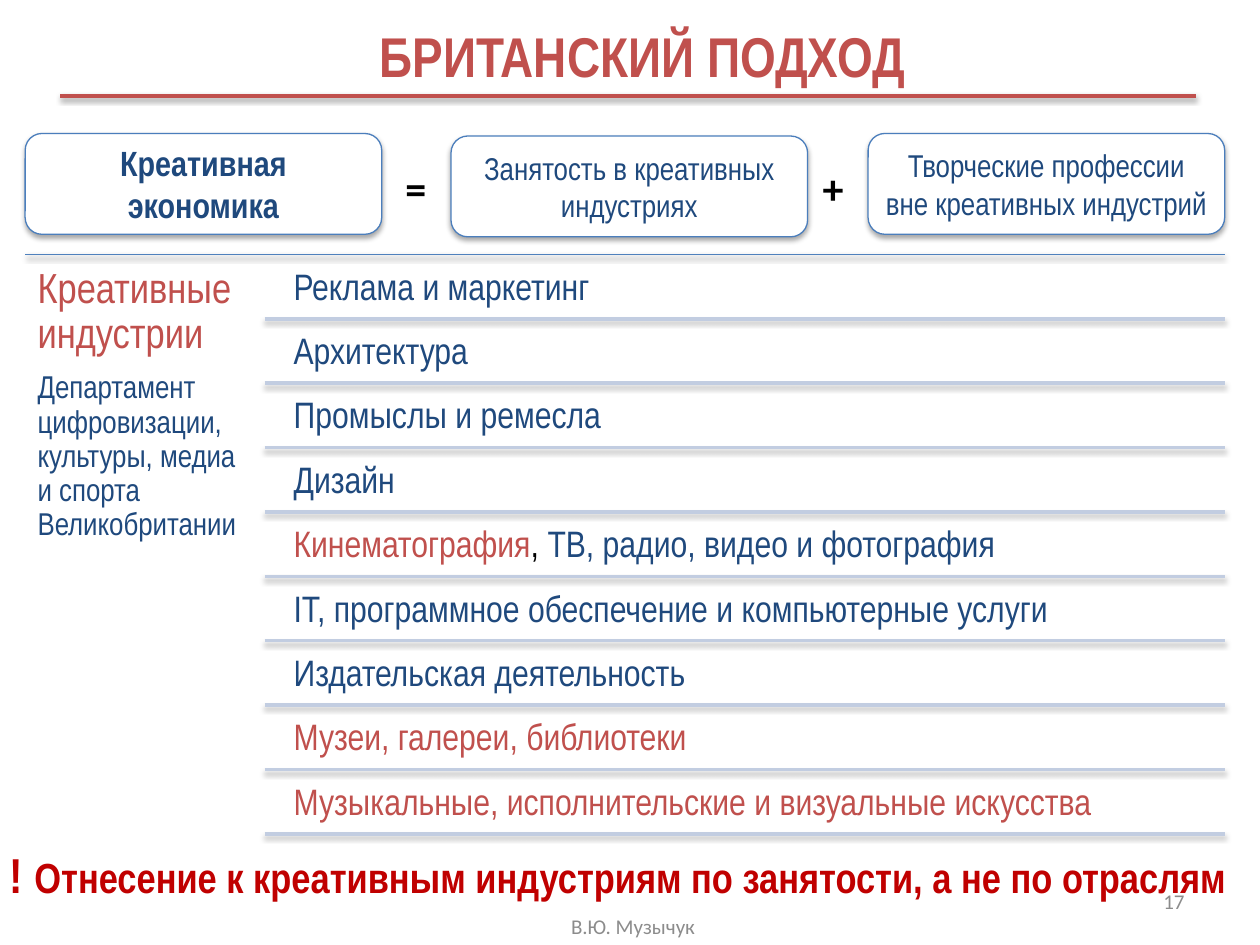
from lxml import etree
from pptx import Presentation
from pptx.dml.color import RGBColor
from pptx.enum import shapes, text
from pptx.oxml.ns import qn
from pptx.util import Inches, Pt

RED = RGBColor(0xC0, 0x50, 0x4D)
DARK_RED = RGBColor(0xC0, 0x00, 0x00)
NAVY = RGBColor(0x1F, 0x49, 0x7D)
BLUE = RGBColor(0x4F, 0x81, 0xBD)
BOX_BLUE = RGBColor(0x4B, 0x7E, 0xBC)
PALE_BLUE = RGBColor(0xC2, 0xCD, 0xE1)
GREY = RGBColor(0x8C, 0x8C, 0x8C)
BLACK = RGBColor(0, 0, 0)
WHITE = RGBColor(0xFF, 0xFF, 0xFF)
NARROW = "Arial Narrow"
CENTER, RIGHT = text.PP_ALIGN.CENTER, text.PP_ALIGN.RIGHT
MIDDLE = text.MSO_ANCHOR.MIDDLE

presentation = Presentation()
presentation.slide_width, presentation.slide_height = Inches(10), Inches(7.5)
slide = presentation.slides.add_slide(presentation.slide_layouts[5])


def add_shadow(shape, distance, opacity):
    effects = etree.SubElement(shape._element.spPr, qn("a:effectLst"))
    shadow = etree.SubElement(effects, qn("a:outerShdw"), blurRad=str(Pt(3.1)),
                              dist=str(Pt(distance)), dir="5400000", rotWithShape="0")
    color = etree.SubElement(shadow, qn("a:srgbClr"), val="000000")
    etree.SubElement(color, qn("a:alpha"), val=str(opacity * 1000))


def write(shape, paragraphs, size, color, font=NARROW, bold=False, align=None,
          anchor=text.MSO_ANCHOR.TOP, wrap=True):
    """Fill a shape with paragraphs, each a list of (text, size, color) runs."""
    frame = shape.text_frame
    frame.word_wrap, frame.vertical_anchor = wrap, anchor
    for index, runs in enumerate(paragraphs):
        paragraph = frame.add_paragraph() if index else frame.paragraphs[0]
        paragraph.alignment = align
        paragraph.font.name, paragraph.font.bold = font, bold
        paragraph.font.size, paragraph.font.color.rgb = Pt(size), color
        for words, run_size, run_color in runs:
            run = paragraph.add_run()
            run.text = words
            if run_size != size:
                run.font.size = Pt(run_size)
            if run_color != color:
                run.font.color.rgb = run_color
    return frame


# Title
title = slide.shapes.title
title.left, title.top, title.width, title.height = (
    Inches(0.2), Inches(-0.19), Inches(9.8), Inches(1.25))
write(title, [[("БРИТАНСКИЙ ПОДХОД", 32, RED)]], 32, RED, bold=True, align=CENTER, anchor=MIDDLE)

# Lines: under the title, under the formula, under each industry
ROW_TOP, ROW_STEP = 2.04, 0.511
industries = [
    [("Реклама и маркетинг", NAVY)],
    [("Архитектура", NAVY)],
    [("Промыслы и ремесла", NAVY)],
    [("Дизайн", NAVY)],
    [("Кинематография", RED), (", ", BLACK), ("ТВ, радио, видео и фотография", NAVY)],
    [("IT, программное обеспечение и компьютерные услуги", NAVY)],
    [("Издательская деятельность", NAVY)],
    [("Музеи, галереи, библиотеки", RED)],
    [("Музыкальные, исполнительские и визуальные искусства", RED)],
]
rules = [(0.48, 9.49, 0.76, RED, 2), (0.2, 9.72, 2.02, BLUE, 0.75)]
rules += [(2.1, 9.72, ROW_TOP + 0.49 + row * ROW_STEP, PALE_BLUE, 2)
          for row in range(len(industries))]
for left, right, y, color, width in rules:
    line = slide.shapes.add_connector(shapes.MSO_CONNECTOR.STRAIGHT, Inches(left), Inches(y),
                                      Inches(right), Inches(y))
    line.line.color.rgb, line.line.width = color, Pt(width)
    if width == 2:
        add_shadow(line, 1.6, 38)
    else:
        add_shadow(line, 1.8, 35)

# Industry rows
for row, runs in enumerate(industries):
    box = slide.shapes.add_textbox(Inches(2.24), Inches(ROW_TOP + row * ROW_STEP),
                                   Inches(7.48), Inches(0.49))
    frame = write(box, [[(words, 21, color) for words, color in runs]], 21, runs[0][1])
    frame.margin_left = frame.margin_right = Inches(0.09)
    frame.margin_top = frame.margin_bottom = Inches(0.09)
    frame.paragraphs[0].line_spacing = 0.9

# Left column
box = slide.shapes.add_textbox(Inches(0.2), Inches(2.02), Inches(1.91), Inches(4.63))
frame = write(box, [
    [("Креативные индустрии", 24, RED)],
    [("Департамент цифровизации, культуры, медиа и спорта Великобритании", 18, NAVY)],
], 18, NAVY)
frame.margin_left = frame.margin_right = frame.margin_top = frame.margin_bottom = Inches(0.1)
for paragraph in frame.paragraphs:
    paragraph.line_spacing, paragraph.space_after = 0.9, Pt(8)

# Formula: boxes and signs
for left, top, words, size, bold in [
    (0.2, 1.06, "Креативная экономика", 20, True),
    (3.58, 1.08, "Занятость в креативных индустриях", 18, False),
    (6.89, 1.06, "Творческие профессии вне креативных индустрий", 18, False),
]:
    box = slide.shapes.add_shape(shapes.MSO_SHAPE.ROUNDED_RECTANGLE, Inches(left), Inches(top),
                                 Inches(2.83), Inches(0.8))
    box.fill.solid()
    box.fill.fore_color.rgb = WHITE
    box.line.color.rgb, box.line.width = BOX_BLUE, Pt(0.75)
    add_shadow(box, 1.8, 35)
    write(box, [[(words, size, NAVY)]], size, NAVY, bold=bold, align=CENTER, anchor=MIDDLE)

for left, sign in [(3.12, "="), (6.43, "+")]:
    box = slide.shapes.add_textbox(Inches(left), Inches(1.24), Inches(0.37), Inches(0.5))
    write(box, [[(sign, 24, BLACK)]], 24, BLACK, font="Calibri", bold=True, wrap=False)

# Conclusion
box = slide.shapes.add_textbox(Inches(-0.02), Inches(6.65), Inches(9.92), Inches(0.57))
write(box, [[("! ", 28, DARK_RED),
             ("Отнесение к креативным индустриям по занятости, а не по отраслям", 24, DARK_RED)]],
      24, DARK_RED, bold=True)

# Footer and slide number
for left, top, width, words, align in [(3.44, 7.15, 3.17, "В.Ю. Музычук", CENTER),
                                       (7.17, 6.95, 2.33, "17", RIGHT)]:
    box = slide.shapes.add_textbox(Inches(left), Inches(top), Inches(width), Inches(0.4))
    write(box, [[(words, 12, GREY)]], 12, GREY, font="Calibri", align=align, anchor=MIDDLE)

presentation.save("out.pptx")
